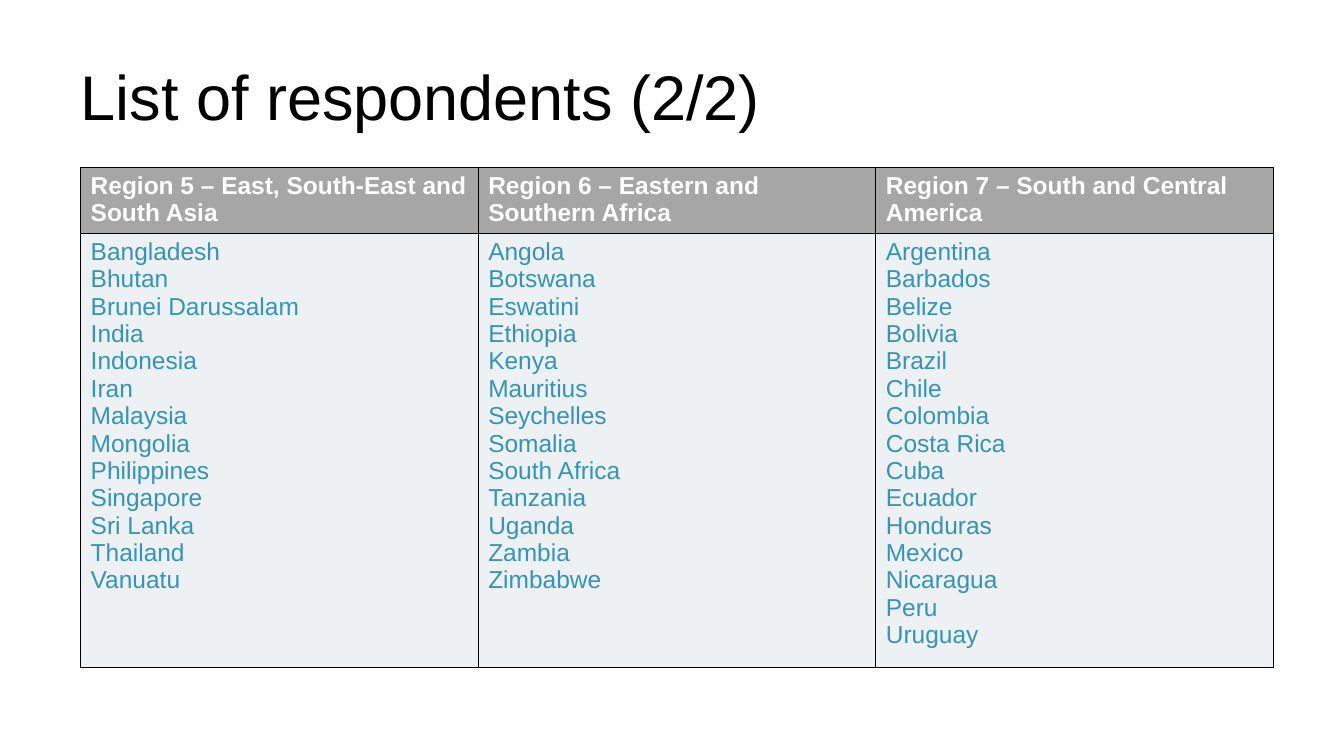
"""Build the second slide listing survey respondents by region."""
from lxml import etree
from pptx import Presentation
from pptx.dml.color import RGBColor
from pptx.enum import text
from pptx.oxml import ns
from pptx.util import Pt

BLACK = RGBColor(0x00, 0x00, 0x00)
WHITE = RGBColor(0xFF, 0xFF, 0xFF)
GREY = RGBColor(0xA6, 0xA6, 0xA6)
PALE_BLUE = RGBColor(0xAD, 0xB9, 0xCA)
BLUE = RGBColor(0x34, 0x94, 0xBA)
FONT = "Arial"

RESPONDENTS = {
    "Region 5 – East, South-East and South Asia": [
        "Bangladesh", "Bhutan", "Brunei Darussalam", "India", "Indonesia",
        "Iran", "Malaysia", "Mongolia", "Philippines", "Singapore",
        "Sri Lanka", "Thailand", "Vanuatu",
    ],
    "Region 6 – Eastern and Southern Africa": [
        "Angola", "Botswana", "Eswatini", "Ethiopia", "Kenya", "Mauritius",
        "Seychelles", "Somalia", "South Africa", "Tanzania", "Uganda",
        "Zambia", "Zimbabwe",
    ],
    "Region 7 – South and Central America": [
        "Argentina", "Barbados", "Belize", "Bolivia", "Brazil", "Chile",
        "Colombia", "Costa Rica", "Cuba", "Ecuador", "Honduras", "Mexico",
        "Nicaragua", "Peru", "Uruguay",
    ],
}


def add_text(paragraph, content, size, color, bold=False):
    run = paragraph.add_run()
    run.text = content
    run.font.name = FONT
    run.font.size = Pt(size)
    run.font.bold = bold
    run.font.color.rgb = color


def fill_cell(cell, lines, color, fill, bold=False, opacity=100):
    frame = cell.text_frame
    for index, line in enumerate(lines):
        paragraph = frame.add_paragraph() if index else frame.paragraphs[0]
        add_text(paragraph, line, 17.5, color, bold)
    cell.fill.solid()
    cell.fill.fore_color.rgb = fill
    properties = cell._tc.get_or_add_tcPr()
    if opacity < 100:
        fill_color = properties.find(ns.qn("a:solidFill"))[0]
        etree.SubElement(fill_color, ns.qn("a:alpha"), val=str(opacity * 1000))
    for position, side in enumerate(("lnL", "lnR", "lnT", "lnB")):
        border = etree.Element(ns.qn(f"a:{side}"), w=str(Pt(1)))
        border_fill = etree.SubElement(border, ns.qn("a:solidFill"))
        etree.SubElement(border_fill, ns.qn("a:srgbClr"), val=str(BLACK))
        properties.insert(position, border)


presentation = Presentation()
presentation.slide_width = Pt(960)
presentation.slide_height = Pt(540)
slide = presentation.slides.add_slide(presentation.slide_layouts[5])

title = slide.shapes.title
title.left, title.top, title.width, title.height = Pt(57.6), Pt(43.2), Pt(844.6), Pt(56.2)
title_frame = title.text_frame
title_frame.margin_left = title_frame.margin_right = 0
title_frame.vertical_anchor = text.MSO_ANCHOR.MIDDLE
title_frame.auto_size = text.MSO_AUTO_SIZE.NONE
title_paragraph = title_frame.paragraphs[0]
title_paragraph.alignment = text.PP_ALIGN.LEFT
title_paragraph.line_spacing = 0.9
add_text(title_paragraph, "List of respondents (2/2)", 45, BLACK)

table = slide.shapes.add_table(
    2, len(RESPONDENTS), Pt(57.6), Pt(119.5), Pt(852), Pt(357)
).table
table.rows[0].height = Pt(47)
table.rows[1].height = Pt(310)
for column, (region, countries) in enumerate(RESPONDENTS.items()):
    table.columns[column].width = Pt(284)
    fill_cell(table.cell(0, column), [region], WHITE, GREY, bold=True)
    fill_cell(table.cell(1, column), countries, BLUE, PALE_BLUE, opacity=20)

presentation.save("out.pptx")
